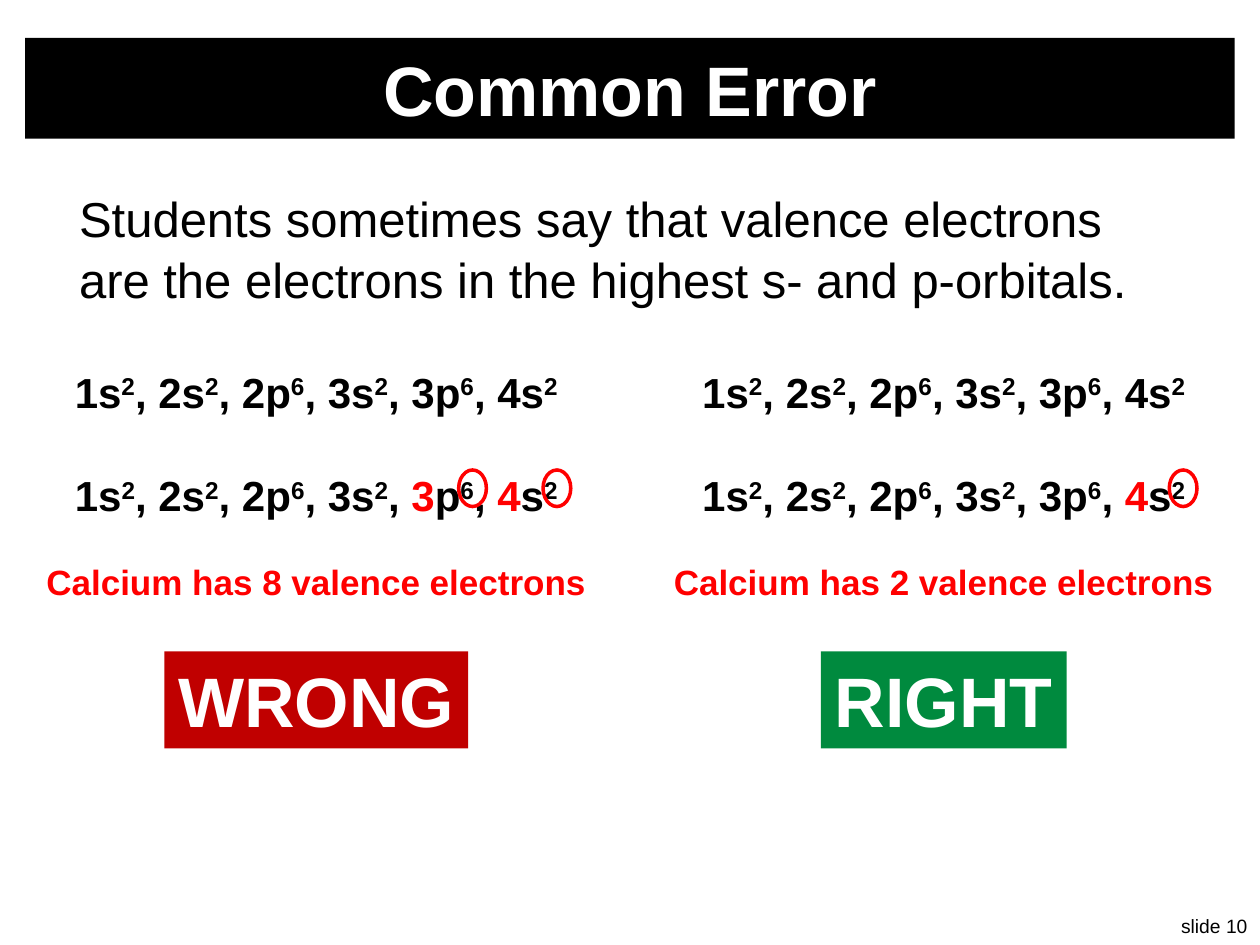
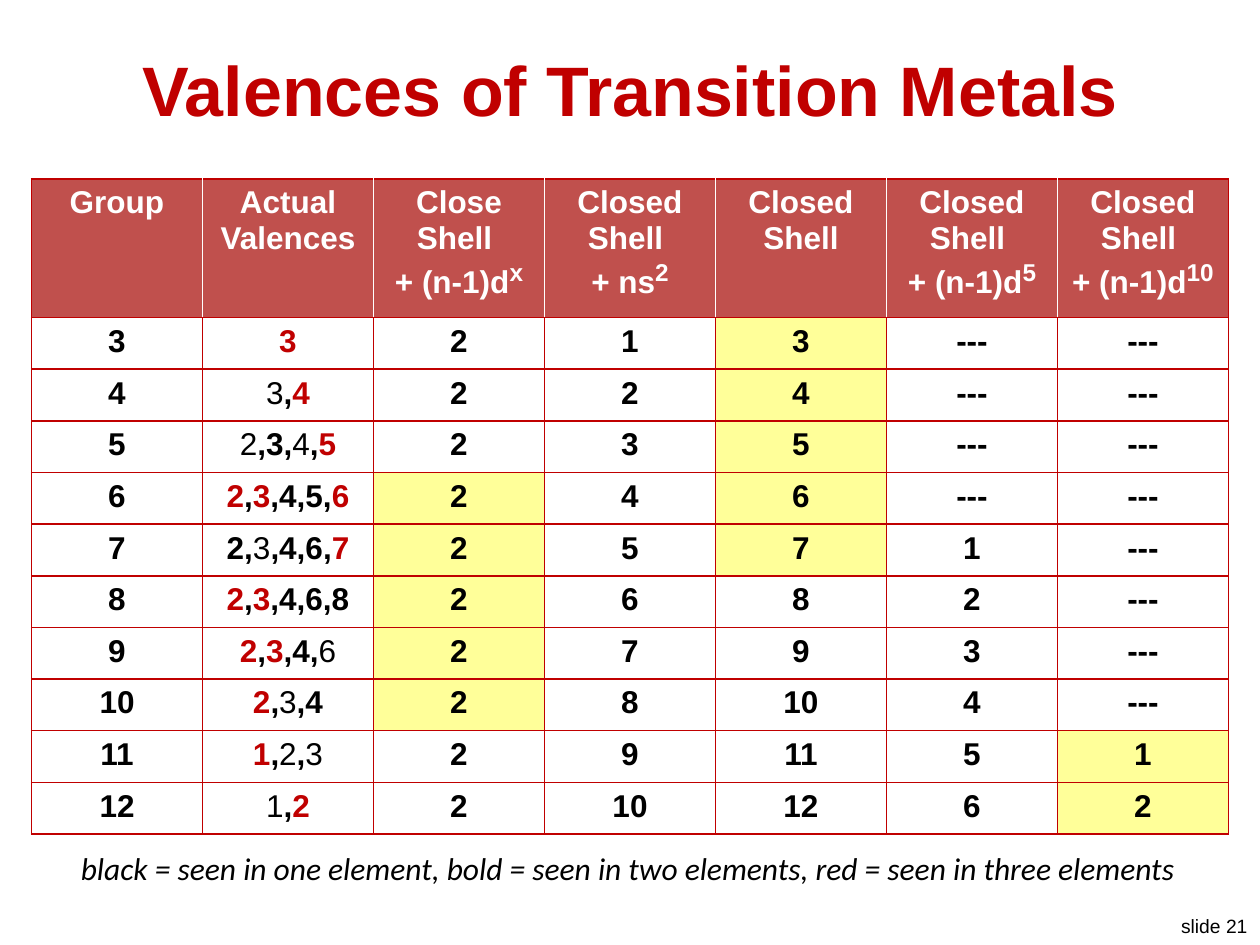
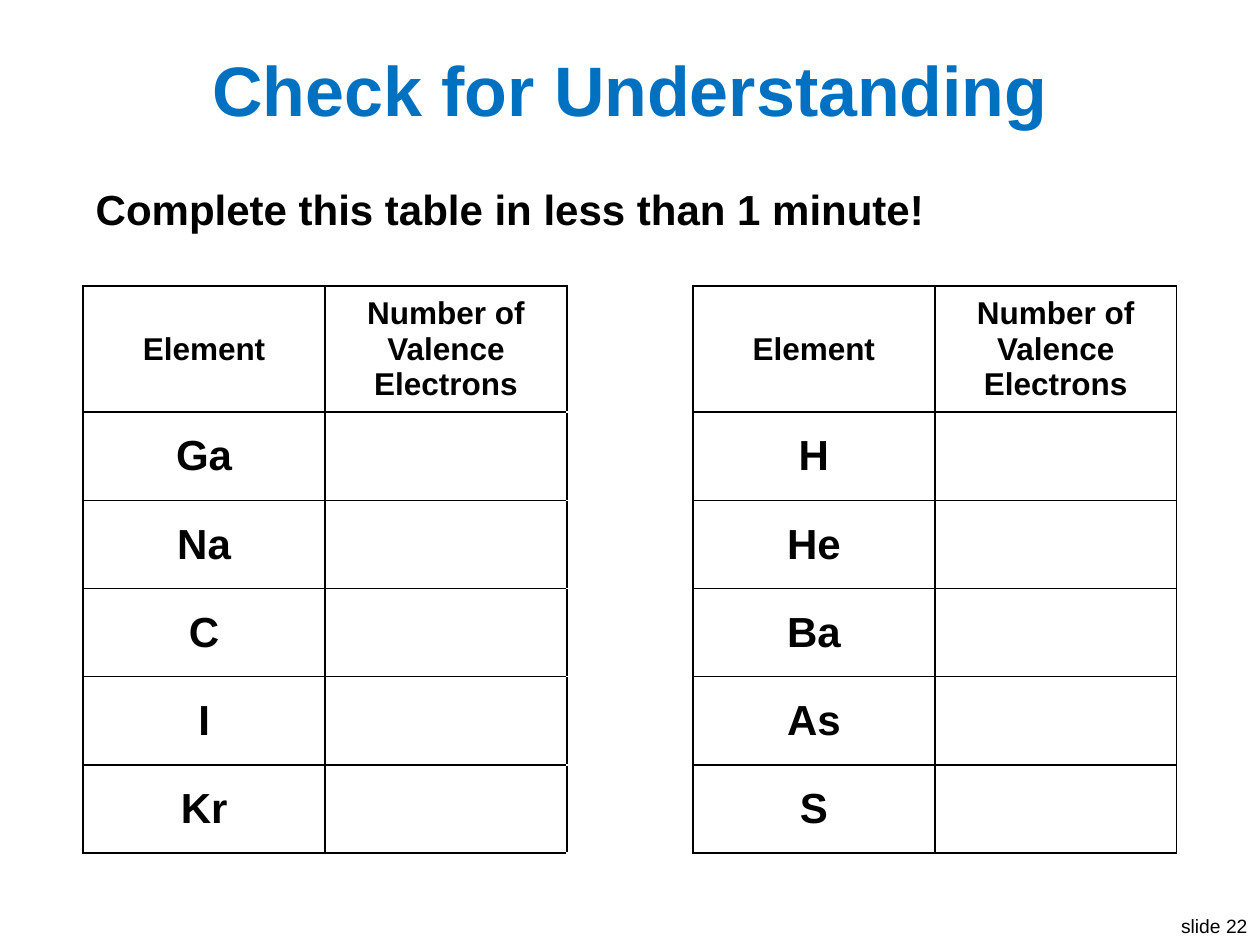
from dataclasses import dataclass

from lxml.etree import SubElement
from pptx import Presentation
from pptx.dml.color import RGBColor
from pptx.enum.shapes import MSO_SHAPE as Shape
from pptx.enum.text import MSO_ANCHOR as Anchor, PP_ALIGN as Align
from pptx.oxml.ns import qn
from pptx.util import Inches, Pt

BLACK, WHITE = "000000", "FFFFFF"
RED, DARK_RED, GREEN, BLUE = "FF0000", "C00000", "008A3E", "0070C0"
HEADER_RED, YELLOW = "C0504D", "FFFF99"
FONT = "Arial"


@dataclass(frozen=True)
class Box:
    left: float
    top: float
    width: float
    height: float

    def lengths(self) -> tuple:
        return tuple(Inches(n) for n in (self.left, self.top, self.width, self.height))


@dataclass(frozen=True)
class Verdict:
    center: float
    counted: str
    electrons: int
    label: str
    label_width: float
    fill: str
    circles: tuple


@dataclass(frozen=True)
class Borders:
    left: str
    right: str
    top: str
    bottom: str


VERDICTS = (
    Verdict(2.51, "*3|p|^6|, |*4|s|^2", 8, "WRONG", 2.41, DARK_RED, (3.64, 4.31)),
    Verdict(7.49, "3p|^6|, |*4|s|^2", 2, "RIGHT", 1.95, GREEN, (9.28,)),
)
INNER_SHELLS = "1s|^2|, 2s|^2|, 2p|^6|, 3s|^2|, "

VALENCE_HEADERS = (
    "Group", "Actual Valences", "Close Shell \n+ (n-1)d|^x", "Closed Shell \n+ ns|^2",
    "Closed Shell", "Closed Shell \n+ (n-1)d|^5", "Closed Shell \n+ (n-1)d|^10",
)
ACTUAL_VALENCES = {
    3: "*3",
    4: "~3|,|*4",
    5: "~2|,3,|~4|,|*5",
    6: "*2|,|*3|,4,5,|*6",
    7: "2,|~3|,4,6,|*7",
    8: "*2|,|*3|,4,6,8",
    9: "*2|,|*3|,4,|~6",
    10: "*2|,|~3|,4",
    11: "*1|,|~2|,|~3",
    12: "~1|,|*2",
}
HIGHLIGHTED_GROUPS = {2: range(6, 11), 4: range(3, 8), 6: range(11, 13)}

ELEMENT_PAIRS = (("Ga", "H"), ("Na", "He"), ("C", "Ba"), ("I", "As"), ("Kr", "S"))
GAP_COLUMN = 2


def color(value: str) -> RGBColor:
    return RGBColor.from_string(value)


def write(frame, text: str, *, size: float = 18, font: str = FONT, fill: str = BLACK,
          accent: str = RED, bold: bool = False, italic: bool = False,
          align=Align.CENTER, anchor=Anchor.TOP, wrap: bool = True,
          line_spacing: float = 1.0, raised_size: float = 0) -> None:
    """Bars split runs; ^ raises a run, * accents it and ~ makes it regular."""
    frame.word_wrap = wrap
    frame.vertical_anchor = anchor
    for index, line in enumerate(text.split("\n")):
        paragraph = frame.add_paragraph() if index else frame.paragraphs[0]
        paragraph.alignment = align
        paragraph.line_spacing = line_spacing
        for part in line.split("|"):
            mark = part[0] if part[0] in "^*~" else ""
            run = paragraph.add_run()
            run.text = part[len(mark):]
            run.font.name = font
            run.font.size = Pt(raised_size if mark == "^" and raised_size else size)
            run.font.bold = bold and mark != "~"
            run.font.italic = italic
            run.font.color.rgb = color(accent if mark == "*" else fill)
            if mark == "^":
                run.font._element.set("baseline", "30000")


def add_text(slide, box: Box, text: str, **text_format) -> None:
    write(slide.shapes.add_textbox(*box.lengths()).text_frame, text, **text_format)


def add_shape(slide, kind, box: Box, *, fill: str = "", line: str = ""):
    shape = slide.shapes.add_shape(kind, *box.lengths())
    shape.shadow.inherit = False
    if fill:
        shape.fill.solid()
        shape.fill.fore_color.rgb = color(fill)
    else:
        shape.fill.background()
    if line:
        shape.line.color.rgb = color(line)
        shape.line.width = Pt(2)
    else:
        shape.line.fill.background()
    return shape


def add_label(slide, center: float, top: float, width: float, height: float,
              text: str, *, background: str = WHITE, **text_format) -> None:
    box = Box(center - width / 2, top, width, height)
    shape = add_shape(slide, Shape.RECTANGLE, box, fill=background)
    write(shape.text_frame, text, bold=True, wrap=False, **text_format)


def start_slide(presentation, title: str, number: int, *, title_color: str, band: str = ""):
    slide = presentation.slides.add_slide(presentation.slide_layouts[6])
    add_text(slide, Box(9.25, 7.21, 0.75, 0.29), f"slide {number}", size=11,
             align=Align.RIGHT, wrap=False)
    title_shape = add_shape(slide, Shape.RECTANGLE, Box(0.2, 0.3, 9.6, 0.8), fill=band)
    write(title_shape.text_frame, title, size=40, bold=True, fill=title_color,
          anchor=Anchor.MIDDLE)
    return slide


def add_table(slide, left: float, top: float, widths: list, heights: list):
    box = Box(left, top, sum(widths), sum(heights))
    table = slide.shapes.add_table(len(heights), len(widths), *box.lengths()).table
    table.first_row = table.horz_banding = False
    for column, width in zip(table.columns, widths):
        column.width = Inches(width)
    for row, height in zip(table.rows, heights):
        row.height = Inches(height)
    return table


def style_cell(cell, borders: Borders, fill: str = "") -> None:
    properties = cell._tc.get_or_add_tcPr()
    for side, value in zip("LRTB", (borders.left, borders.right, borders.top, borders.bottom)):
        line = SubElement(properties, qn(f"a:ln{side}"), w=str(Pt(1)))
        solid = SubElement(line, qn("a:solidFill"))
        SubElement(solid, qn("a:srgbClr"), val=value)
    if fill:
        cell.fill.solid()
        cell.fill.fore_color.rgb = color(fill)
    else:
        cell.fill.background()


def build_common_error(presentation) -> None:
    slide = start_slide(presentation, "Common Error", 10, title_color=WHITE, band=BLACK)
    add_text(slide, Box(0.53, 1.42, 8.94, 1.07),
             "Students sometimes say that valence electrons are the electrons "
             "in the highest s- and p-orbitals.",
             size=28, align=Align.LEFT, line_spacing=1.05)
    for verdict in VERDICTS:
        center = verdict.center
        add_label(slide, center, 2.86, 4.16, 0.5, INNER_SHELLS + "3p|^6|, 4s|^2", size=24)
        add_label(slide, center, 3.68, 4.16, 0.5, INNER_SHELLS + "|" + verdict.counted
                  if verdict.counted.startswith("*") else INNER_SHELLS + verdict.counted,
                  size=24)
        add_label(slide, center, 4.4, 4.52, 0.44,
                  f"Calcium has {verdict.electrons} valence electrons", size=20, fill=RED)
        add_label(slide, center, 5.17, verdict.label_width, 0.77, verdict.label,
                  background=verdict.fill, size=40, fill=WHITE)
        for left in verdict.circles:
            add_shape(slide, Shape.OVAL, Box(left, 3.73, 0.22, 0.29), line=RED)


def valence_row(group: int) -> tuple:
    return (
        str(group), ACTUAL_VALENCES[group], "2", str(group - 2), str(group),
        str(group - 6) if group > 6 else "---",
        str(group - 10) if group > 10 else "---",
    )


def build_transition_metals(presentation) -> None:
    slide = start_slide(presentation, "Valences of Transition Metals", 21,
                        title_color=DARK_RED)
    columns = len(VALENCE_HEADERS)
    table = add_table(slide, 0.25, 1.42, [9.5 / columns] * columns,
                      [1.03] + [0.41] * len(ACTUAL_VALENCES))
    for column, header in enumerate(VALENCE_HEADERS):
        cell = table.cell(0, column)
        style_cell(cell, Borders(WHITE if column else DARK_RED,
                                 WHITE if column < columns - 1 else DARK_RED,
                                 DARK_RED, DARK_RED), HEADER_RED)
        write(cell.text_frame, header, bold=True, fill=WHITE, raised_size=24)
    for row, group in enumerate(ACTUAL_VALENCES, start=1):
        for column, value in enumerate(valence_row(group)):
            cell = table.cell(row, column)
            highlighted = group in HIGHLIGHTED_GROUPS.get(column, ())
            style_cell(cell, Borders(*[DARK_RED] * 4), YELLOW if highlighted else "")
            write(cell.text_frame, value, bold=True, accent=DARK_RED)
    add_text(slide, Box(0.35, 6.69, 9.27, 0.4),
             "black = seen in one element, bold = seen in two elements, "
             "red = seen in three elements",
             font="Calibri", italic=True, wrap=False)


def build_understanding_check(presentation) -> None:
    slide = start_slide(presentation, "Check for Understanding", 22, title_color=BLUE)
    widths = [1.92, 1.92, 1, 1.92, 1.92]
    table = add_table(slide, 0.66, 1.42, widths, [0.83, 0.94] + [0.7] * len(ELEMENT_PAIRS))
    headers = ("Element", "Number of Valence Electrons")
    rows = [(*headers, "", *headers)]
    rows += [(left, "", "", right, "") for left, right in ELEMENT_PAIRS]

    for column in range(len(widths)):
        bottom = WHITE if column == GAP_COLUMN else BLACK
        style_cell(table.cell(0, column), Borders(WHITE, WHITE, WHITE, bottom))
    prompt = table.cell(0, 0)
    prompt.merge(table.cell(0, len(widths) - 1))
    prompt.margin_bottom = Inches(0.4)
    prompt.vertical_anchor = Anchor.MIDDLE
    write(prompt.text_frame, "Complete this table in less than 1 minute!", size=24,
          bold=True, align=Align.LEFT)

    for row, values in enumerate(rows, start=1):
        for column, value in enumerate(values):
            cell = table.cell(row, column)
            edge = WHITE if column == GAP_COLUMN else BLACK
            style_cell(cell, Borders(BLACK, BLACK, edge, edge))
            if value:
                write(cell.text_frame, value, size=18 if row == 1 else 24, bold=True)
                cell.vertical_anchor = Anchor.MIDDLE


def main() -> None:
    presentation = Presentation()
    presentation.slide_width, presentation.slide_height = Inches(10), Inches(7.5)
    build_common_error(presentation)
    build_transition_metals(presentation)
    build_understanding_check(presentation)
    presentation.save("out.pptx")


if __name__ == "__main__":
    main()
